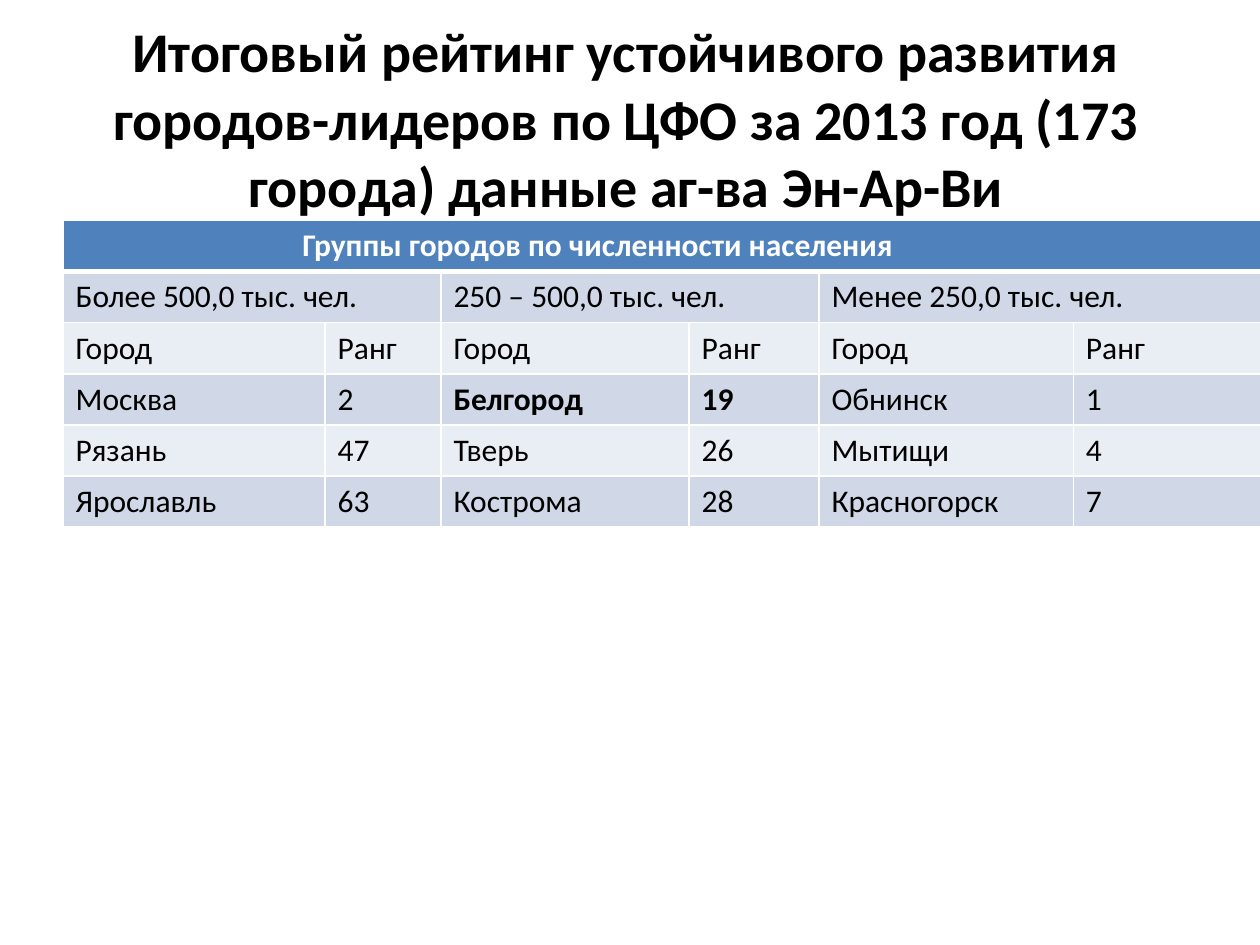
from lxml import etree
from pptx import Presentation
from pptx.dml.color import RGBColor
from pptx.enum import text
from pptx.oxml import ns
from pptx.util import Inches, Pt

HUES = {"head": "4F81BD", "dark": "D0D8E8", "light": "E9EDF4",
        "white": "FFFFFF", "black": "000000"}


def style(par, size, hue, bold):
    font = par.font
    font.name, font.size, font.bold = "Calibri", Pt(size), bold
    font.color.rgb = RGBColor.from_string(HUES[hue])


def edge(cell, side, width):
    props = cell._tc.get_or_add_tcPr()
    line = etree.SubElement(props, ns.qn("a:ln" + side), w=str(Pt(width)))
    fill = etree.SubElement(line, ns.qn("a:solidFill"))
    etree.SubElement(fill, ns.qn("a:srgbClr"), val=HUES["white"])


deck = Presentation()
deck.slide_width, deck.slide_height = Inches(10), Inches(7.5)
slide = deck.slides.add_slide(deck.slide_layouts[5])

# Title
title = slide.shapes.title
title.left, title.top = Inches(0.47), Inches(0.31)
title.width, title.height = Inches(9), Inches(1.25)
frame = title.text_frame
frame.text = ("Итоговый рейтинг устойчивого развития городов-лидеров по ЦФО "
              "за 2013 год (173 города) данные аг-ва Эн-Ар-Ви")
frame.vertical_anchor = text.MSO_ANCHOR.MIDDLE
frame.paragraphs[0].alignment = text.PP_ALIGN.CENTER
style(frame.paragraphs[0], 32, "black", True)

# Table contents: blanks are covered by merged cells
rows = [
    ["Группы городов по численности населения"] + [""] * 5,
    ["Более 500,0 тыс. чел.", "", "250 – 500,0 тыс. чел.", "",
     "Менее 250,0 тыс. чел.", ""],
    ["Город", "Ранг"] * 3,
    ["Москва", "2", "Белгород", "19", "Обнинск", "1"],
    ["Рязань", "47", "Тверь", "26", "Мытищи", "4"],
    ["Ярославль", "63", "Кострома", "28", "Красногорск", "7"],
]
widths = [2.08, 0.92, 1.97, 1.03, 2.02, 0.98]
strong = ("Белгород", "19")

grid = slide.shapes.add_table(len(rows), len(widths), Inches(0.5), Inches(1.75),
                              Inches(9), Inches(2.43)).table
for col, width in zip(grid.columns, widths):
    col.width = Inches(width)

# Cells: borders, banded fill and text
for r, row in enumerate(rows):
    for c, word in enumerate(row):
        cell = grid.cell(r, c)
        for side in "LRTB":
            thick = (r, side) in ((0, "B"), (1, "T"))
            edge(cell, side, 3 if thick else 1)
        band = "head" if r == 0 else "dark" if r % 2 else "light"
        cell.fill.solid()
        cell.fill.fore_color.rgb = RGBColor.from_string(HUES[band])
        cell.text = word
        style(cell.text_frame.paragraphs[0], 18,
              "black" if r else "white", r == 0 or word in strong)

# Merged headings
grid.cell(0, 0).merge(grid.cell(0, 5))
grid.cell(0, 0).margin_left = Inches(1.9)
for c in (0, 2, 4):
    grid.cell(1, c).merge(grid.cell(1, c + 1))

deck.save("out.pptx")
